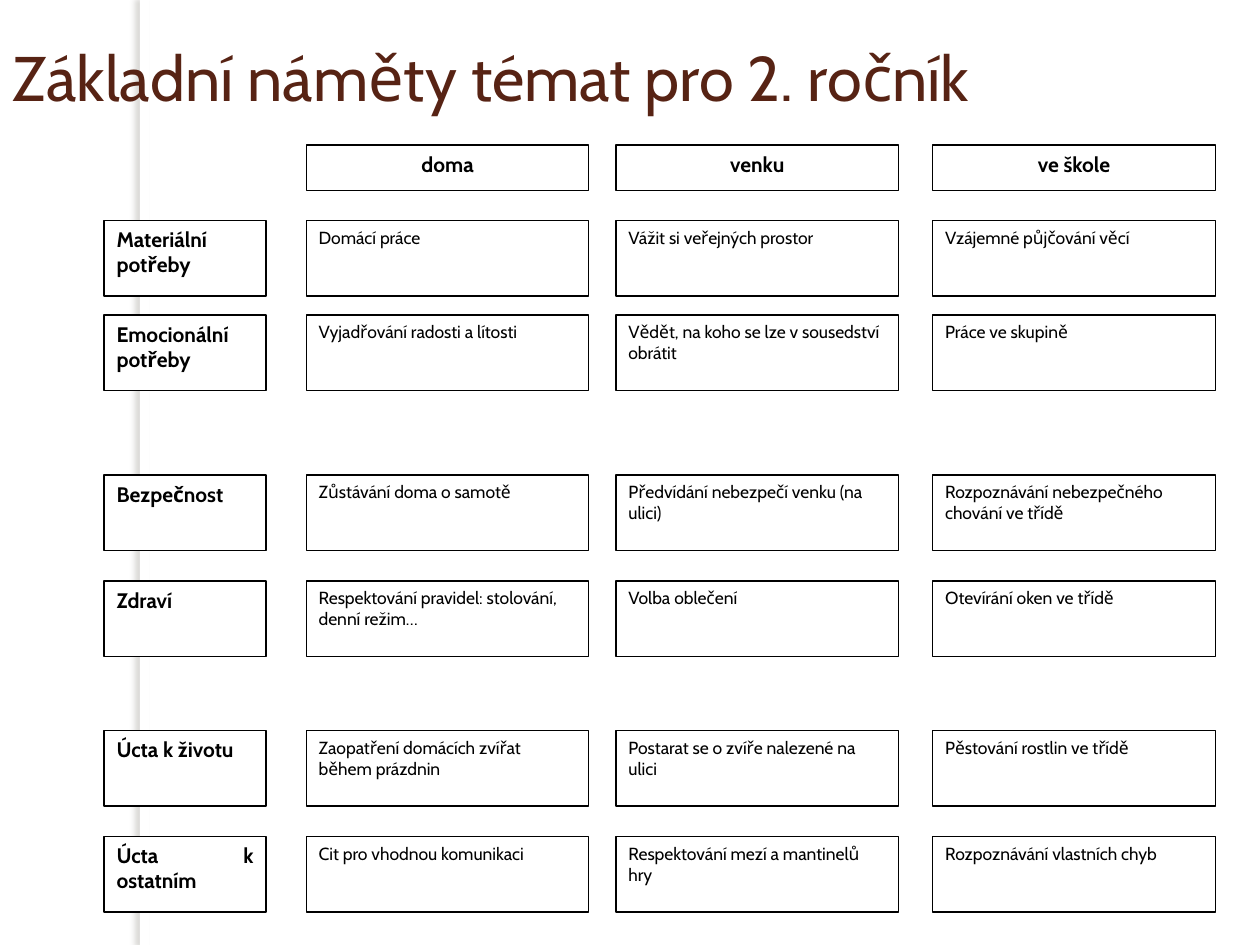
from lxml import etree
from pptx import Presentation
from pptx.dml.color import RGBColor
from pptx.enum import shapes, text
from pptx.oxml import ns
from pptx.util import Pt

FONT = "Cabin"
BROWN = RGBColor(0x57, 0x23, 0x14)
BLACK = RGBColor(0, 0, 0)
WHITE = RGBColor(0xFF, 0xFF, 0xFF)
SHADOW = RGBColor(0x73, 0x6F, 0x63)

# Grid in points
LABEL_LEFT, LABEL_WIDTH = 59.5, 92.5
COLUMN_LEFTS, COLUMN_WIDTH = (175, 352, 533), 161.5
HEADER_TOP, HEADER_HEIGHT = 82.8, 26
ROW_HEIGHT = 43.2

PLACES = ("doma", "venku", "ve škole")
NEEDS = (
    (126, "Materiální potřeby",
     ("Domácí práce", "Vážit si veřejných prostor", "Vzájemné půjčování věcí")),
    (180, "Emocionální potřeby",
     ("Vyjadřování radosti a lítosti",
      "Vědět, na koho se lze v sousedství obrátit", "Práce ve skupině")),
    (271.5, "Bezpečnost",
     ("Zůstávání doma o samotě", "Předvídání nebezpečí venku (na ulici)",
      "Rozpoznávání nebezpečného chování ve třídě")),
    (332, "Zdraví",
     ("Respektování pravidel: stolování, denní režim…", "Volba oblečení",
      "Otevírání oken ve třídě")),
    (417.5, "Úcta k životu",
     ("Zaopatření domácích zvířat během prázdnin",
      "Postarat se o zvíře nalezené na ulici", "Pěstování rostlin ve třídě")),
    (478, "Úcta k ostatním",
     ("Cit pro vhodnou komunikaci", "Respektování mezí a mantinelů hry",
      "Rozpoznávání vlastních chyb")),
)


def style_text(frame, size, color, align, bold=False):
    paragraph = frame.paragraphs[0]
    paragraph.alignment = align
    for run in paragraph.runs:
        run.font.name = FONT
        run.font.size = Pt(size)
        run.font.bold = bold
        run.font.color.rgb = color


def add_side_strip(slide, left, top, width, height):
    strip = slide.shapes.add_shape(shapes.MSO_SHAPE.RECTANGLE,
                                   Pt(left), Pt(top), Pt(width), Pt(height))
    strip.fill.solid()
    strip.fill.fore_color.rgb = WHITE
    strip.line.fill.background()
    # Soft shadow falling to the left
    strip.shadow.inherit = False
    effects = strip.element.spPr.find(ns.qn("a:effectLst"))
    outer = etree.SubElement(effects, ns.qn("a:outerShdw"), blurRad=str(Pt(3)),
                             dist=str(Pt(3)), dir="10800000", rotWithShape="0")
    color = etree.SubElement(outer, ns.qn("a:srgbClr"), val=str(SHADOW))
    etree.SubElement(color, ns.qn("a:alpha"), val="25000")


def place_title(slide, left, top, width, height):
    title = slide.shapes.title
    title.left, title.top = Pt(left), Pt(top)
    title.width, title.height = Pt(width), Pt(height)
    frame = title.text_frame
    frame.text = "Základní náměty témat pro 2. ročník"
    frame.vertical_anchor = text.MSO_ANCHOR.MIDDLE
    frame.auto_size = text.MSO_AUTO_SIZE.NONE
    style_text(frame, 36, BROWN, text.PP_ALIGN.LEFT)
    # Draw the title in front of the strip
    slide.shapes._spTree.append(title.element)


def add_box(slide, left, top, width, height, wording, size, align, bold=False):
    box = slide.shapes.add_shape(shapes.MSO_SHAPE.RECTANGLE,
                                 Pt(left), Pt(top), Pt(width), Pt(height))
    box.shadow.inherit = False
    box.fill.solid()
    box.fill.fore_color.rgb = WHITE
    box.line.color.rgb = BLACK
    box.line.width = Pt(0.75)
    frame = box.text_frame
    frame.text = wording
    frame.word_wrap = True
    frame.vertical_anchor = text.MSO_ANCHOR.TOP
    style_text(frame, size, BLACK, align, bold)


def add_headers(slide, top, height):
    for left, place in zip(COLUMN_LEFTS, PLACES):
        add_box(slide, left, top, COLUMN_WIDTH, height, place, 12,
                text.PP_ALIGN.CENTER, bold=True)


def add_need_row(slide, top, height, need, topics):
    add_box(slide, LABEL_LEFT, top, LABEL_WIDTH, height, need, 12,
            text.PP_ALIGN.JUSTIFY, bold=True)
    for left, topic in zip(COLUMN_LEFTS, topics):
        add_box(slide, left, top, COLUMN_WIDTH, height, topic, 10,
                text.PP_ALIGN.LEFT)


def main():
    prs = Presentation()
    prs.slide_width, prs.slide_height = Pt(720), Pt(540)
    slide = prs.slides.add_slide(prs.slide_layouts[5])
    add_side_strip(slide, 80, 0, 5.5, 540)
    place_title(slide, 0, 21.6, 680.4, 44)
    add_headers(slide, HEADER_TOP, HEADER_HEIGHT)
    for top, need, topics in NEEDS:
        add_need_row(slide, top, ROW_HEIGHT, need, topics)
    prs.save("out.pptx")


if __name__ == "__main__":
    main()
